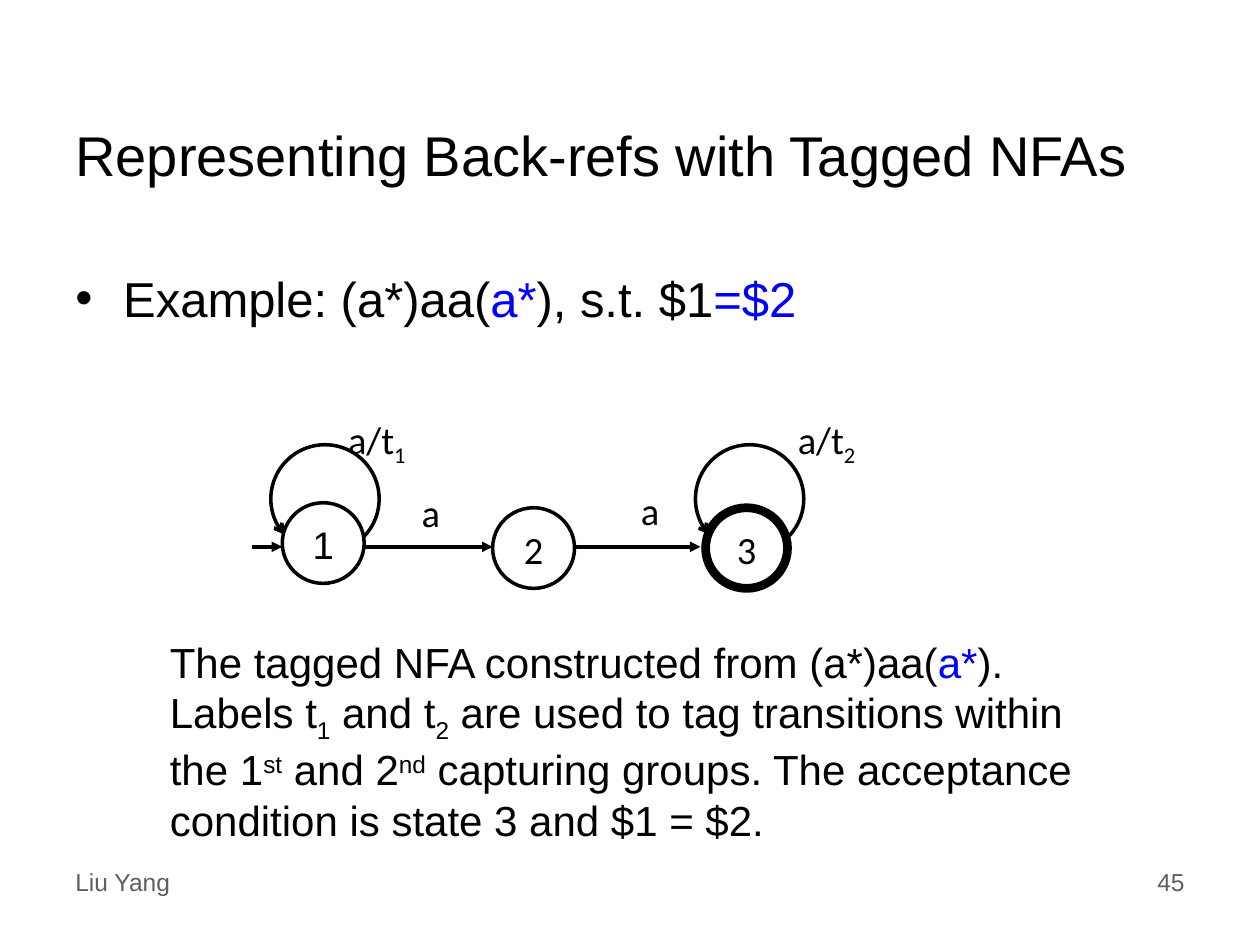
from lxml.etree import SubElement
from pptx import Presentation
from pptx.dml.color import RGBColor
from pptx.enum.shapes import MSO_CONNECTOR, MSO_SHAPE
from pptx.enum.text import MSO_ANCHOR, PP_ALIGN
from pptx.oxml.ns import qn
from pptx.util import Pt

PX = 9144
BLACK = RGBColor(0, 0, 0)
WHITE = RGBColor(255, 255, 255)
BLUE = RGBColor(0, 0, 255)
GREY = RGBColor(0x5F, 0x5F, 0x5F)
SUB, SUPER = -25000, 30000


def px(*values):
    return [v * PX for v in values]


def write(tf, runs, size, font="Arial", color=BLACK, align=PP_ALIGN.LEFT):
    tf.word_wrap = True
    p = tf.paragraphs[0]
    p.alignment = align
    for text, run_color, baseline in runs:
        r = p.add_run()
        r.text = text
        r.font.size = Pt(size)
        r.font.name = font
        r.font.color.rgb = run_color or color
        if baseline:
            r.font._element.set("baseline", str(baseline))
    return p


def plain(text):
    return [(text, None, 0)]


def add_text(slide, box, runs, size, **style):
    tf = slide.shapes.add_textbox(*px(*box)).text_frame
    write(tf, runs, size, **style)
    return tf


def add_title(slide, box):
    tf = add_text(slide, box, plain("Representing Back-refs with Tagged NFAs"), 32)
    tf.vertical_anchor = MSO_ANCHOR.MIDDLE


def add_example(slide, box):
    runs = [("Example: (a*)aa(", None, 0), ("a*", BLUE, 0),
            ("), s.t. $1", None, 0), ("=$2", BLUE, 0)]
    tf = add_text(slide, box, runs, 28)
    pPr = tf.paragraphs[0]._p.get_or_add_pPr()
    pPr.set("marL", str(38 * PX))
    pPr.set("indent", str(-38 * PX))
    SubElement(pPr, qn("a:buFont")).set("typeface", "Arial")
    SubElement(pPr, qn("a:buChar")).set("char", "•")


def add_label(slide, box, runs):
    tf = add_text(slide, box, runs, 22, font="Calibri", align=PP_ALIGN.CENTER)
    tf.margin_left = tf.margin_right = 0


def add_state(slide, x, y, name, font="Calibri", weight=2):
    s = slide.shapes.add_shape(MSO_SHAPE.FLOWCHART_CONNECTOR, *px(x, y, 65, 64))
    s.shadow.inherit = False
    s.fill.solid()
    s.fill.fore_color.rgb = WHITE
    s.line.color.rgb = BLACK
    s.line.width = Pt(weight)
    s.text_frame.vertical_anchor = MSO_ANCHOR.TOP
    write(s.text_frame, plain(name), 22, font=font, align=PP_ALIGN.CENTER)


def add_loop(slide, x, y):
    s = slide.shapes.add_shape(MSO_SHAPE.ARC, *px(x, y, 86, 86))
    s.shadow.inherit = False
    s.fill.background()
    s.line.color.rgb = BLACK
    s.line.width = Pt(2)
    for i, degrees in enumerate((139, 44)):
        s.adjustments[i] = degrees * 0.6
    SubElement(s.line._get_or_add_ln(), qn("a:headEnd")).set("type", "arrow")


def add_arrow(slide, x1, x2, y):
    s = slide.shapes.add_connector(MSO_CONNECTOR.STRAIGHT, *px(x1, y, x2, y))
    s.line.color.rgb = BLACK
    s.line.width = Pt(2)
    SubElement(s.line._get_or_add_ln(), qn("a:tailEnd")).set("type", "triangle")
    SubElement(s._element.spPr, qn("a:effectLst"))


def add_automaton(slide, x, y):
    add_label(slide, (x + 67, y, 64, 46), [("a/t", None, 0), ("1", None, SUB)])
    add_state(slide, x + 24, y + 74, "1", font="Arial")
    add_state(slide, x + 191, y + 78, "2")
    add_state(slide, x + 360, y + 78, "3", weight=5)
    for loop_x in (15, 352):
        add_loop(slide, x + loop_x, y + 28)
    for start, end in ((0, 24), (89, 191), (256, 356)):
        add_arrow(slide, x + start, x + end, y + 109)
    add_label(slide, (x + 110, y + 58, 64, 46), plain("a"))
    add_label(slide, (x + 263, y + 57, 106, 46), plain("a"))
    add_label(slide, (x + 403, y, 106, 46), [("a/t", None, 0), ("2", None, SUB)])


def add_explanation(slide, box):
    runs = [
        ("The tagged NFA constructed from (a*)aa(", None, 0),
        ("a*", BLUE, 0),
        ("). Labels t", None, 0),
        ("1", None, SUB),
        (" and t", None, 0),
        ("2", None, SUB),
        (" are used to tag transitions within the 1", None, 0),
        ("st", None, SUPER),
        (" and 2", None, 0),
        ("nd", None, SUPER),
        (" capturing groups. The acceptance condition is state 3 and $1 = $2.", None, 0),
    ]
    add_text(slide, box, runs, 24)


def add_footer(slide, x, y, width):
    add_text(slide, (x, y, 250, 33), plain("Liu Yang"), 14, color=GREY)
    add_text(slide, (x + width - 233, y, 233, 52), plain("45"), 14,
             color=GREY, align=PP_ALIGN.RIGHT)


def main():
    prs = Presentation()
    prs.slide_width, prs.slide_height = px(1000, 750)
    slide = prs.slides.add_slide(prs.slide_layouts[6])
    add_title(slide, (50, 78, 900, 88))
    add_example(slide, (50, 208, 900, 75))
    add_automaton(slide, 200, 325)
    add_explanation(slide, (125, 500, 767, 172))
    add_footer(slide, 50, 683, 900)
    prs.save("out.pptx")


if __name__ == "__main__":
    main()
